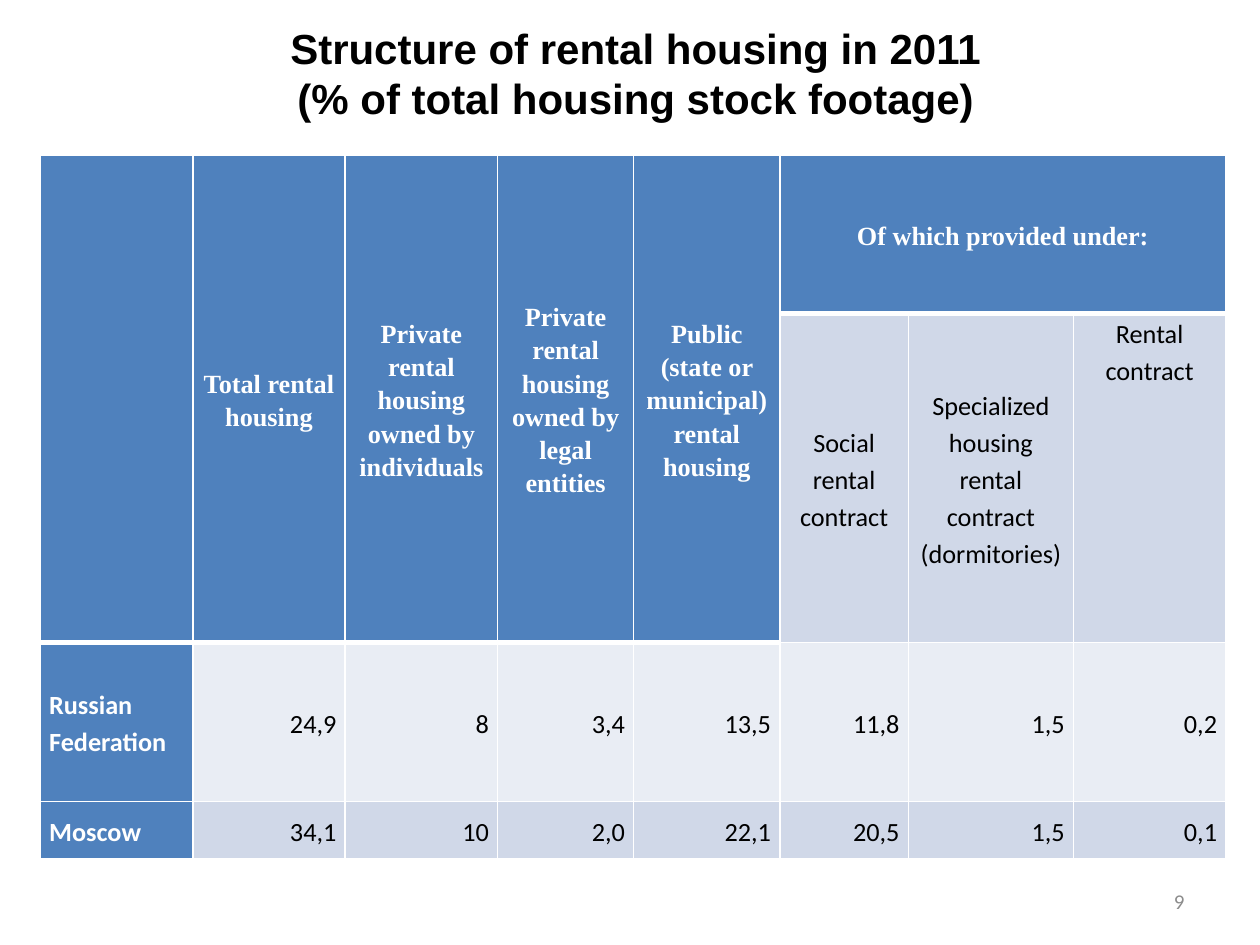
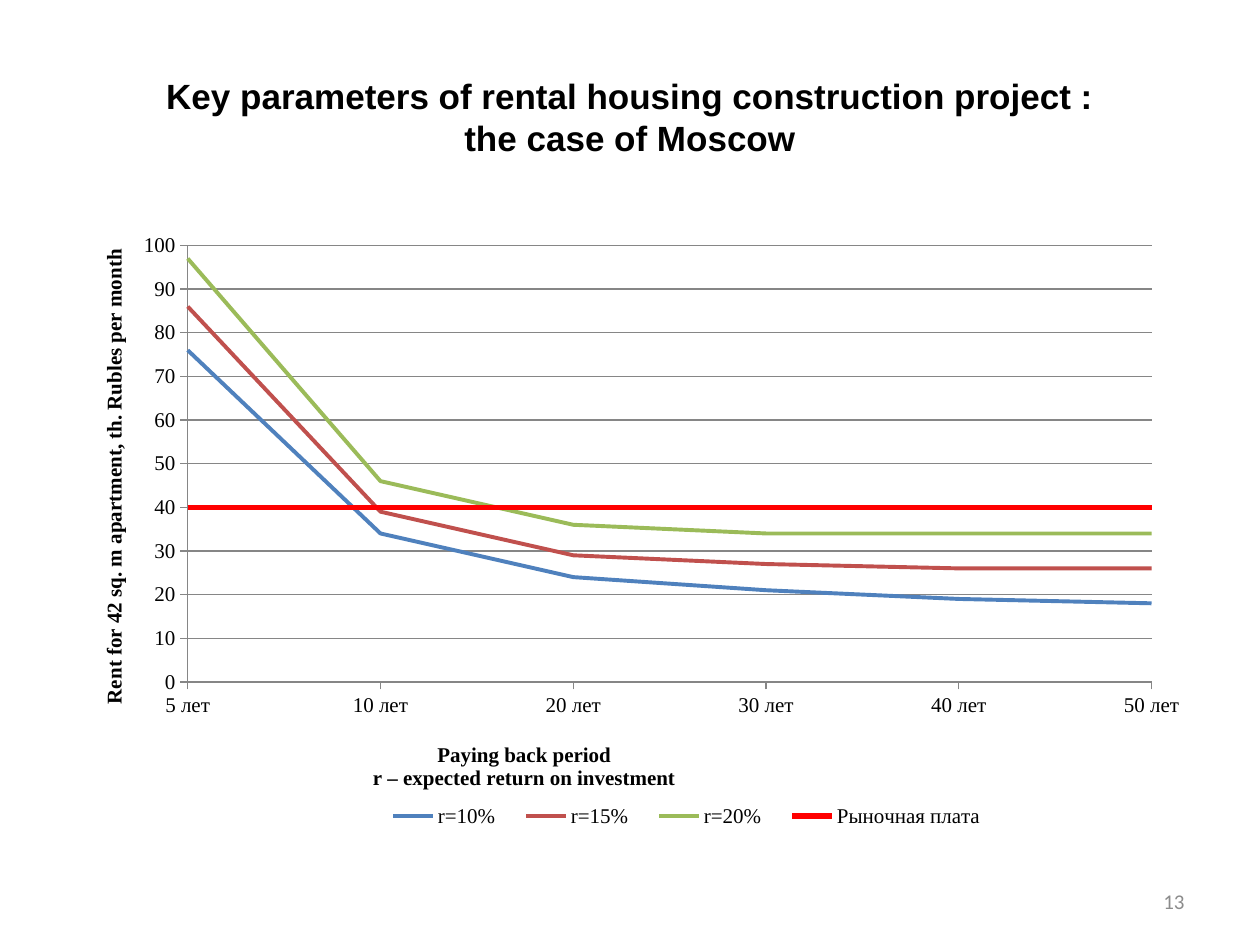
from dataclasses import dataclass

from lxml import etree
from pptx import Presentation
from pptx.chart.data import CategoryChartData
from pptx.dml.color import RGBColor
from pptx.enum import chart as charts, text
from pptx.oxml import ns
from pptx.util import Inches, Pt


@dataclass(frozen=True)
class Theme:
    # Colours
    black: str = "000000"
    white: str = "FFFFFF"
    gray: str = "8C8C8C"
    axis: str = "868686"
    blue: str = "4F81BD"
    red: str = "C0504D"
    green: str = "9BBB59"
    alert: str = "FF0000"
    dark: str = "D0D8E8"
    light: str = "E9EDF4"
    # Fonts and type sizes
    head: str = "Arial"
    body: str = "Calibri"
    serif: str = "Times New Roman"
    big: int = 24
    mid: int = 20
    cell: int = 15
    small: int = 12


T = Theme()
ALIGN = text.PP_ALIGN
MID = text.MSO_ANCHOR.MIDDLE
TOP = text.MSO_ANCHOR.TOP

HEADS = [
    "", "Total rental housing", "Private rental housing owned by individuals",
    "Private rental housing owned by legal entities",
    "Public (state or municipal) rental housing", "Of which provided under:",
]
SUBS = ["Social rental contract",
        "Specialized housing rental contract (dormitories)", "Rental contract"]
ROWS = [
    ["Russian Federation", "24,9", "8", "3,4", "13,5", "11,8", "1,5", "0,2"],
    ["Moscow", "34,1", "10", "2,0", "22,1", "20,5", "1,5", "0,1"],
]
WIDTHS = [1.21, 1.21, 1.21, 1.08, 1.16, 1.02, 1.31, 1.21]
HEIGHTS = [1.26, 2.61, 1.26, 0.46]
SPLIT = 5  # first column under the shared heading

YEARS = [f"{n} лет" for n in (5, 10, 20, 30, 40, 50)]
LINES = [
    ("r=10%", [76, 34, 24, 21, 19, 18], T.blue, 2.25),
    ("r=15%", [86, 39, 29, 27, 26, 26], T.red, 2.25),
    ("r=20%", [97, 46, 36, 34, 34, 34], T.green, 2.25),
    ("Рыночная плата", [40] * 6, T.alert, 3),
]


# Text helpers
def style(font, face, size, color, bold=False):
    look = {"name": face, "size": Pt(size), "bold": bold}
    for key, value in look.items():
        setattr(font, key, value)
    font.color.rgb = RGBColor.from_string(color)


def label(slide, box, lines, align, *look):
    frame = slide.shapes.add_textbox(*map(Inches, box)).text_frame
    frame.word_wrap = True
    frame.vertical_anchor = MID
    frame.text = lines
    for para in frame.paragraphs:
        para.alignment = align
        style(para.font, *look)
        for run in para.runs:
            style(run.font, *look)


def title(slide, box, lines, size):
    label(slide, box, lines, ALIGN.CENTER, T.head, size, T.black, True)


def number(slide, value):
    label(slide, (7.17, 6.95, 2.33, 0.4), str(value), ALIGN.RIGHT,
          T.body, T.small, T.gray)


# Table helpers
def border(cell, top, bottom):
    props = cell._tc.get_or_add_tcPr()
    for side, width in zip("LRTB", (1, 1, top, bottom)):
        line = etree.SubElement(props, ns.qn(f"a:ln{side}"), w=str(Pt(width)))
        fill = etree.SubElement(line, ns.qn("a:solidFill"))
        etree.SubElement(fill, ns.qn("a:srgbClr"), val=T.white)


def write(cell, words, align, face, color, bold, anchor=MID):
    look = {"margin_left": Inches(0.07), "margin_right": Inches(0.07),
            "margin_top": 0, "margin_bottom": 0, "vertical_anchor": anchor}
    for key, value in look.items():
        setattr(cell, key, value)
    if words:
        para = cell.text_frame.paragraphs[0]
        para.alignment = align
        para.line_spacing = 1.15
        run = para.add_run()
        run.text = words
        style(run.font, face, T.cell, color, bold)


def shade(row, col):
    if row == 0 or col == 0 or (row == 1 and col < SPLIT):
        return T.blue
    return T.light if row == 2 else T.dark


def grid(slide):
    shape = slide.shapes.add_table(
        len(HEIGHTS), len(WIDTHS), Inches(0.32), Inches(1.23),
        Inches(sum(WIDTHS)), Inches(sum(HEIGHTS)))
    table = shape.table
    for col, width in zip(table.columns, WIDTHS):
        col.width = Inches(width)
    for row, height in zip(table.rows, HEIGHTS):
        row.height = Inches(height)

    # Fills, and a heavy rule below the headings
    for r in range(len(HEIGHTS)):
        for c in range(len(WIDTHS)):
            cell = table.cell(r, c)
            last = 1 if c < SPLIT else 0
            border(cell, 3 if r == last + 1 else 1, 3 if r <= last else 1)
            cell.fill.solid()
            cell.fill.fore_color.rgb = RGBColor.from_string(shade(r, c))

    # Headings
    for c in range(SPLIT):
        table.cell(0, c).merge(table.cell(1, c))
    table.cell(0, SPLIT).merge(table.cell(0, len(WIDTHS) - 1))
    for c, words in enumerate(HEADS):
        write(table.cell(0, c), words, ALIGN.CENTER, T.serif, T.white, True)
    for c, words in enumerate(SUBS, SPLIT):
        anchor = TOP if words == SUBS[-1] else MID
        write(table.cell(1, c), words, ALIGN.CENTER, T.body, T.black, False,
              anchor)

    # Regions and values
    for r, row in enumerate(ROWS, 2):
        for c, words in enumerate(row):
            look = ((ALIGN.RIGHT, T.body, T.black, False) if c
                    else (ALIGN.LEFT, T.body, T.white, True))
            write(table.cell(r, c), words, *look)


# Chart helpers
def place(node, spot, inner=False):
    """Pin a chart part; spot holds shares of the chart's size."""
    for old in node.findall(ns.qn("c:layout")):
        node.remove(old)
    layout = etree.Element(ns.qn("c:layout"))
    manual = etree.SubElement(layout, ns.qn("c:manualLayout"))
    items = [("layoutTarget", "inner")] if inner else []
    items += [("xMode", "edge"), ("yMode", "edge")]
    items += zip("xywh", spot)
    for tag, value in items:
        etree.SubElement(manual, ns.qn(f"c:{tag}"), val=str(value))
    ahead = [k for k in ("c:tx", "c:legendPos")
             if node.find(ns.qn(k)) is not None]
    if ahead:
        node.find(ns.qn(ahead[0])).addnext(layout)
    else:
        node.insert(0, layout)


def stroke(line, color, width):
    line.color.rgb = RGBColor.from_string(color)
    line.width = Pt(width)


def name(axis, words):
    frame = axis.axis_title.text_frame
    frame.text = words
    for para in frame.paragraphs:
        style(para.font, T.serif, T.small, T.black, True)
        for run in para.runs:
            style(run.font, T.serif, T.small, T.black, True)


def plot(slide):
    data = CategoryChartData(number_format="0")
    data.categories = YEARS
    for key, values, *_ in LINES:
        data.add_series(key, values)
    box = map(Inches, (0.5, 1.75, 9, 4.95))
    chart = slide.shapes.add_chart(
        charts.XL_CHART_TYPE.LINE, *box, data).chart
    style(chart.font, T.serif, T.small, T.black)
    chart.has_title = False
    chart.plots[0].vary_by_categories = False
    for line, (_, _, color, width) in zip(chart.plots[0].series, LINES):
        line.smooth = False
        line.marker.style = charts.XL_MARKER_STYLE.NONE
        stroke(line.format.line, color, width)

    # Axes
    across, up = chart.category_axis, chart.value_axis
    for axis in (across, up):
        axis.major_tick_mark = charts.XL_TICK_MARK.OUTSIDE
        stroke(axis.format.line, T.axis, 0.75)
    name(across, "Paying back period\nr – expected return on investment")
    name(up, "Rent for 42 sq. m apartment, th. Rubles per month")
    look = {"minimum_scale": 0, "maximum_scale": 100, "major_unit": 10,
            "has_major_gridlines": True}
    for key, value in look.items():
        setattr(up, key, value)
    stroke(up.major_gridlines.format.line, T.axis, 0.75)
    up.tick_labels.number_format = "0"
    up.tick_labels.number_format_is_linked = False

    # Start the lines on the value axis
    cross = etree.Element(ns.qn("c:crossBetween"), val="midCat")
    up._element.find(ns.qn("c:majorUnit")).addprevious(cross)

    # Legend and positions
    chart.has_legend = True
    chart.legend.position = charts.XL_LEGEND_POSITION.BOTTOM
    chart.legend.include_in_layout = False
    area = chart._chartSpace.find(".//" + ns.qn("c:plotArea"))
    place(area, (0.11, 0.04, 0.85, 0.7), inner=True)
    place(across.axis_title._element, (0.27, 0.83))
    place(up.axis_title._element, (0.03, 0.04))
    place(chart.legend._element, (0.27, 0.92, 0.56, 0.07))


def main():
    deck = Presentation()
    deck.slide_width, deck.slide_height = Inches(10), Inches(7.5)
    blank = deck.slide_layouts[6]

    # Rental housing table
    slide = deck.slides.add_slide(blank)
    title(slide, (0.87, 0, 8.35, 1.15),
          "Structure of rental housing in 2011\n"
          "(% of total housing stock footage)", T.big)
    number(slide, 9)
    grid(slide)

    # Rent by payback period
    slide = deck.slides.add_slide(blank)
    title(slide, (0.5, 0.3, 9, 1.25),
          "Key parameters of rental housing construction project :\v"
          "the case of Moscow", T.mid)
    number(slide, 13)
    plot(slide)

    deck.save("out.pptx")


if __name__ == "__main__":
    main()
